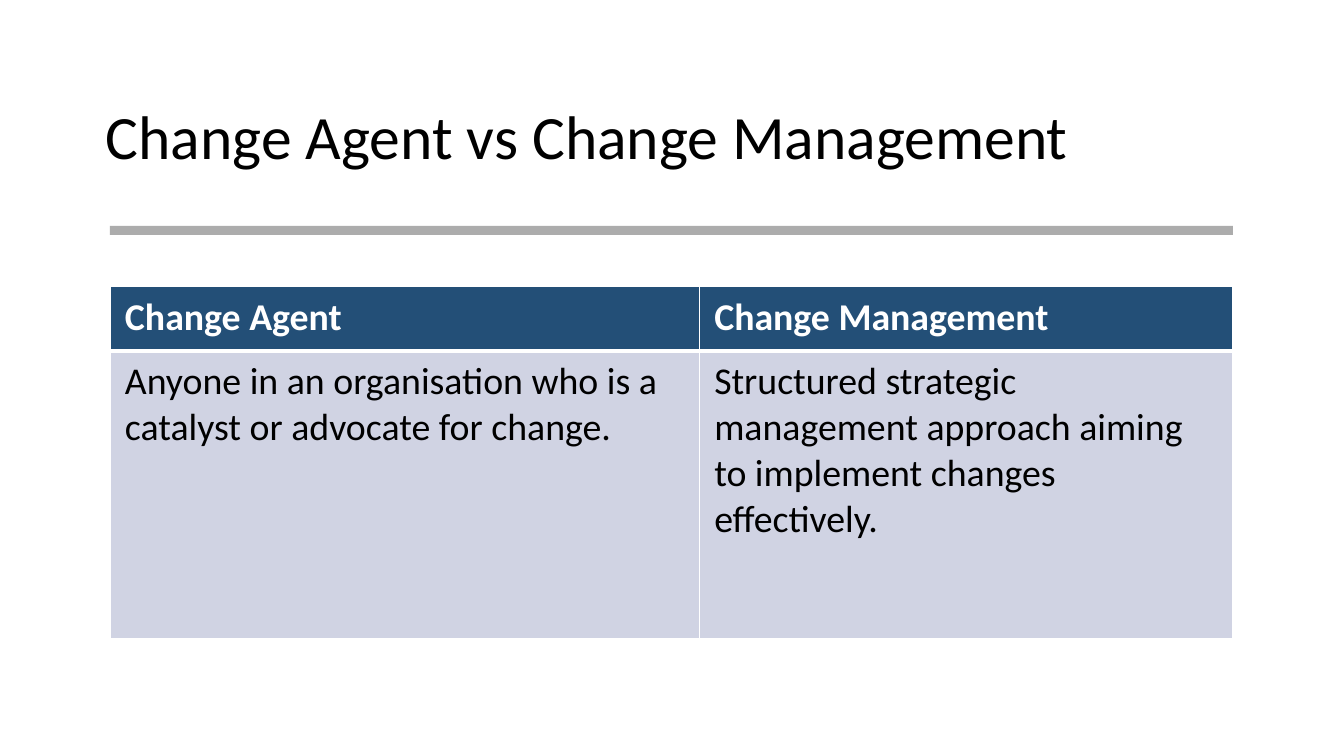
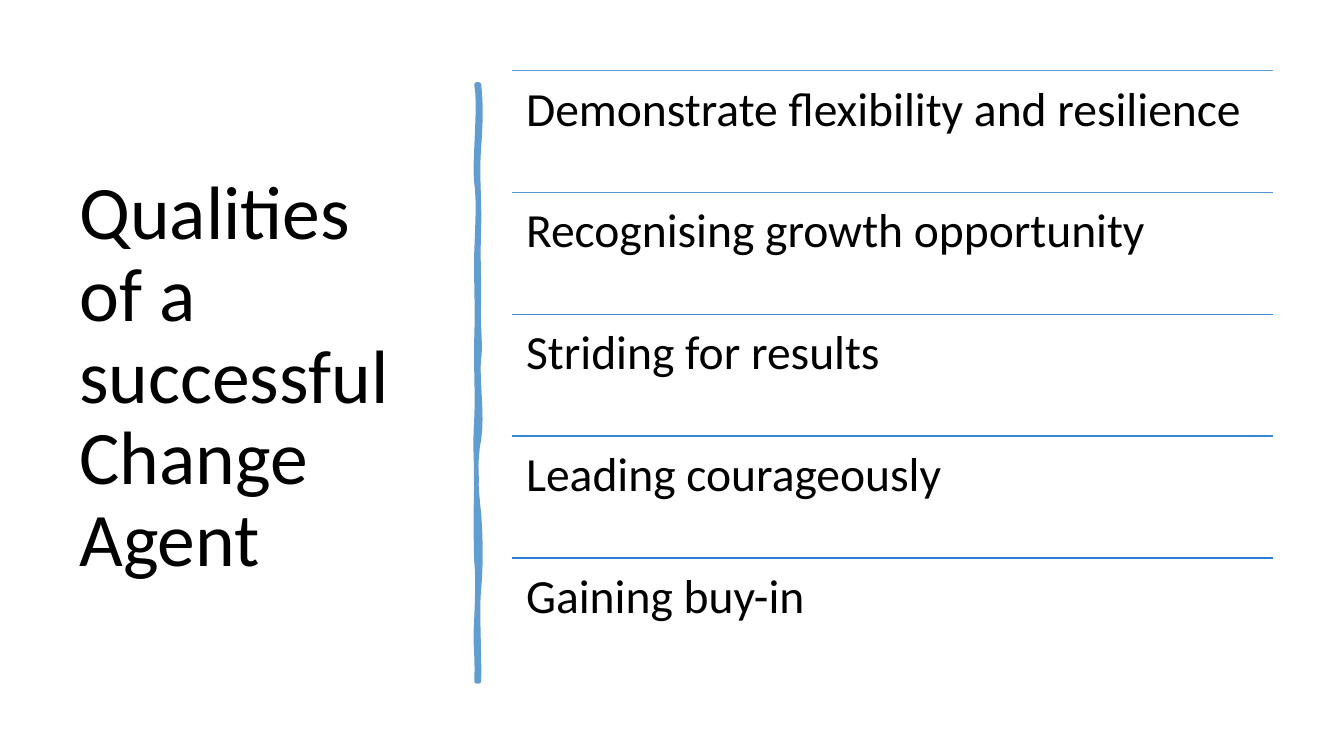
from dataclasses import dataclass

from lxml.etree import SubElement
from pptx import Presentation
from pptx.dml.color import RGBColor
from pptx.enum.shapes import MSO_CONNECTOR as Connector, MSO_SHAPE as Preset
from pptx.enum.text import MSO_ANCHOR as Anchor
from pptx.oxml.ns import qn
from pptx.util import Cm, Pt


@dataclass(frozen=True)
class Theme:
    font: str = "Calibri"
    ink: str = "000000"
    white: str = "FFFFFF"
    bar: str = "808080"
    header: str = "234F77"
    body: str = "D0D3E3"
    spine: str = "629DD1"
    rules: tuple = ("629DD1", "5496D2", "468ED2", "3787D4", "297FD5")
    title_size: int = 44
    side_title_size: int = 54
    quality_size: int = 34
    table_size: int = 27
    hairline: float = 1
    header_line: float = 3
    spine_line: float = 3.25


THEME = Theme()

COMPARISON = (
    ("Change Agent", "Change Management"),
    ("Anyone in an organisation who is a catalyst or advocate for change.",
     "Structured strategic management approach aiming to implement changes effectively."),
)
QUALITIES = (
    "Demonstrate flexibility and resilience",
    "Recognising growth opportunity",
    "Striding for results",
    "Leading courageously",
    "Gaining buy-in",
)

SPINE_X, SPINE_TOP, SPINE_BOTTOM, SPINE_HALF = 12.04, 2.13, 17.17, 0.03
RIGHT_EDGE = (
    (0.08, 2.59, 0.08, 3.02, 3.71),
    (-0.03, 4.39, 0.05, 4.95, 5.74),
    (0, 6.53, 0.03, 6.65, 7.47),
    (0, 8.26, 0.08, 8.69, 9.04),
    (-0.03, 9.4, 0.13, 10.52, 11.07),
    (-0.08, 11.61, -0.05, 12.29, 12.95),
    (0.08, 13.61, 0.08, 14.33, 14.83),
    (-0.03, 15.32, 0.05, 16.51, SPINE_BOTTOM),
)
LEFT_EDGE = (
    (0, 16.41, -0.08, 16.36, 15.57),
    (0, 14.81, 0, 14.48, 14.15),
    (-0.05, 13.82, -0.05, 12.57, 12.12),
    (-0.03, 11.66, -0.08, 11.3, 10.54),
    (0, 9.8, -0.05, 9.47, 8.51),
    (0, 7.57, -0.05, 7.14, 6.35),
    (0, 5.54, 0.03, 5.08, 4.6),
    (-0.1, 4.14, 0.08, 2.64, SPINE_TOP),
)


def write(frame, text, size, color=THEME.ink, bold=False, spacing=1.0):
    """Fill a text frame with one formatted paragraph, breaking at newlines."""
    frame.word_wrap = True
    paragraph = frame.paragraphs[0]
    paragraph.line_spacing = spacing
    for number, line in enumerate(text.split("\n")):
        if number:
            paragraph.add_line_break()
        run = paragraph.add_run()
        run.text = line
        run.font.name = THEME.font
        run.font.size = Pt(size)
        run.font.bold = bold
        run.font.color.rgb = RGBColor.from_string(color)


def inset(holder, across, down):
    """Set the inner margins of a cell or text frame in centimetres."""
    holder.margin_left = holder.margin_right = Cm(across)
    holder.margin_top = holder.margin_bottom = Cm(down)


def paint(fill, color):
    """Give a fill one solid colour."""
    fill.solid()
    fill.fore_color.rgb = RGBColor.from_string(color)


def edge_points(start_y, side, curves, steps=8):
    """Sample one wavy edge of the spine as points in centimetres."""
    y0, x0 = start_y, side * SPINE_HALF
    points = [(x0, y0)]
    for x1, y1, x2, y2, y3 in curves:
        for step in range(1, steps + 1):
            t = step / steps
            weights = ((1 - t) ** 3, 3 * t * (1 - t) ** 2, 3 * t * t * (1 - t), t ** 3)
            points.append((sum(w * x for w, x in zip(weights, (x0, x1, x2, x0))),
                           sum(w * y for w, y in zip(weights, (y0, y1, y2, y3)))))
        y0 = y3
    return points


class Deck:
    """Holds the presentation, its theme and the current slide."""

    def __init__(self, theme):
        """Start an empty widescreen presentation."""
        self.theme = theme
        self.show = Presentation()
        self.show.slide_width, self.show.slide_height = Cm(33.87), Cm(19.05)
        self.shapes = None

    def new_slide(self):
        """Add a blank slide and make it current."""
        self.shapes = self.show.slides.add_slide(self.show.slide_layouts[6]).shapes

    def text(self, words, left, top, width, height, margins=(0.25, 0.13),
             anchor=Anchor.TOP, **style):
        """Add a text box."""
        frame = self.shapes.add_textbox(Cm(left), Cm(top), Cm(width), Cm(height)).text_frame
        inset(frame, *margins)
        frame.vertical_anchor = anchor
        write(frame, words, spacing=0.9, **style)

    def title(self, words, left, top, width, height, size):
        """Add a title centred on its height."""
        self.text(words, left, top, width, height, anchor=Anchor.MIDDLE, size=size)

    def bar(self, left, top, width, height, opacity):
        """Add a translucent bar, with opacity in percent."""
        bar = self.shapes.add_shape(Preset.RECTANGLE, Cm(left), Cm(top), Cm(width), Cm(height))
        bar.shadow.inherit = False
        paint(bar.fill, self.theme.bar)
        bar.line.fill.background()
        tint = bar.fill._xPr.find(qn("a:solidFill"))[0]
        SubElement(tint, qn("a:alpha"), val=str(opacity * 1000))

    def rule(self, left, top, width, color):
        """Add a thin horizontal line."""
        rule = self.shapes.add_connector(
            Connector.STRAIGHT, Cm(left), Cm(top), Cm(left + width), Cm(top))
        rule.line.width = Pt(self.theme.hairline)
        rule.line.color.rgb = RGBColor.from_string(color)
        SubElement(rule._element.spPr, qn("a:effectLst"))

    def spine(self):
        """Add the wavy vertical stroke."""
        outline = (edge_points(SPINE_TOP, 1, RIGHT_EDGE)
                   + edge_points(SPINE_BOTTOM, -1, LEFT_EDGE))
        first, *rest = [(Cm(SPINE_X + x), Cm(y)) for x, y in outline]
        builder = self.shapes.build_freeform(*first)
        builder.add_line_segments(rest, close=True)
        stroke = builder.convert_to_shape()
        stroke.shadow.inherit = False
        paint(stroke.fill, self.theme.spine)
        stroke.line.width = Pt(self.theme.spine_line)
        stroke.line.color.rgb = RGBColor.from_string(self.theme.spine)

    def borders(self, cell, top, bottom):
        """Draw white borders around a cell."""
        thin = self.theme.hairline
        for side, width in (("L", thin), ("R", thin), ("T", top), ("B", bottom)):
            line = SubElement(cell._tc.get_or_add_tcPr(), qn("a:ln" + side), w=str(Pt(width)))
            SubElement(SubElement(line, qn("a:solidFill")), qn("a:srgbClr"), val=self.theme.white)

    def table(self, rows, left, top, widths, heights):
        """Add a table whose first row is a header."""
        theme = self.theme
        table = self.shapes.add_table(len(rows), len(widths), Cm(left), Cm(top),
                                      Cm(sum(widths)), Cm(sum(heights))).table
        table.horz_banding = False
        for column, width in zip(table.columns, widths):
            column.width = Cm(width)
        for number, (row, words, height) in enumerate(zip(table.rows, rows, heights)):
            row.height = Cm(height)
            header = number == 0
            for cell, text in zip(row.cells, words):
                inset(cell, 0.38, 0.2)
                self.borders(cell,
                             top=theme.header_line if number == 1 else theme.hairline,
                             bottom=theme.header_line if header else theme.hairline)
                paint(cell.fill, theme.header if header else theme.body)
                write(cell.text_frame, text, size=theme.table_size, bold=header,
                      color=theme.white if header else theme.ink)


def comparison_slide(deck):
    """Build the comparison of agent and management."""
    deck.new_slide()
    deck.title("Change Agent vs Change Management", 2.41, 1.68, 29.03, 3.68,
               deck.theme.title_size)
    deck.bar(2.77, 5.69, 28.3, 0.23, opacity=65)
    deck.table(COMPARISON, 2.77, 7.21, widths=(14.85, 13.45), heights=(1.63, 7.24))


def qualities_slide(deck):
    """Build the list of qualities beside its title."""
    left, first_top, width, step = 12.9, 1.78, 19.18, 3.07
    deck.new_slide()
    deck.title("Qualities\nof a successful Change Agent", 1.75, 1.78, 9.5, 15.52,
               deck.theme.side_title_size)
    deck.spine()
    for number, (quality, color) in enumerate(zip(QUALITIES, deck.theme.rules)):
        top = first_top + number * step
        deck.rule(left, top, width, color)
        deck.text(quality, left, top, width, step, margins=(0.36, 0.36),
                  size=deck.theme.quality_size)


def main():
    """Build and save the presentation."""
    deck = Deck(THEME)
    comparison_slide(deck)
    qualities_slide(deck)
    deck.show.save("out.pptx")


if __name__ == "__main__":
    main()
